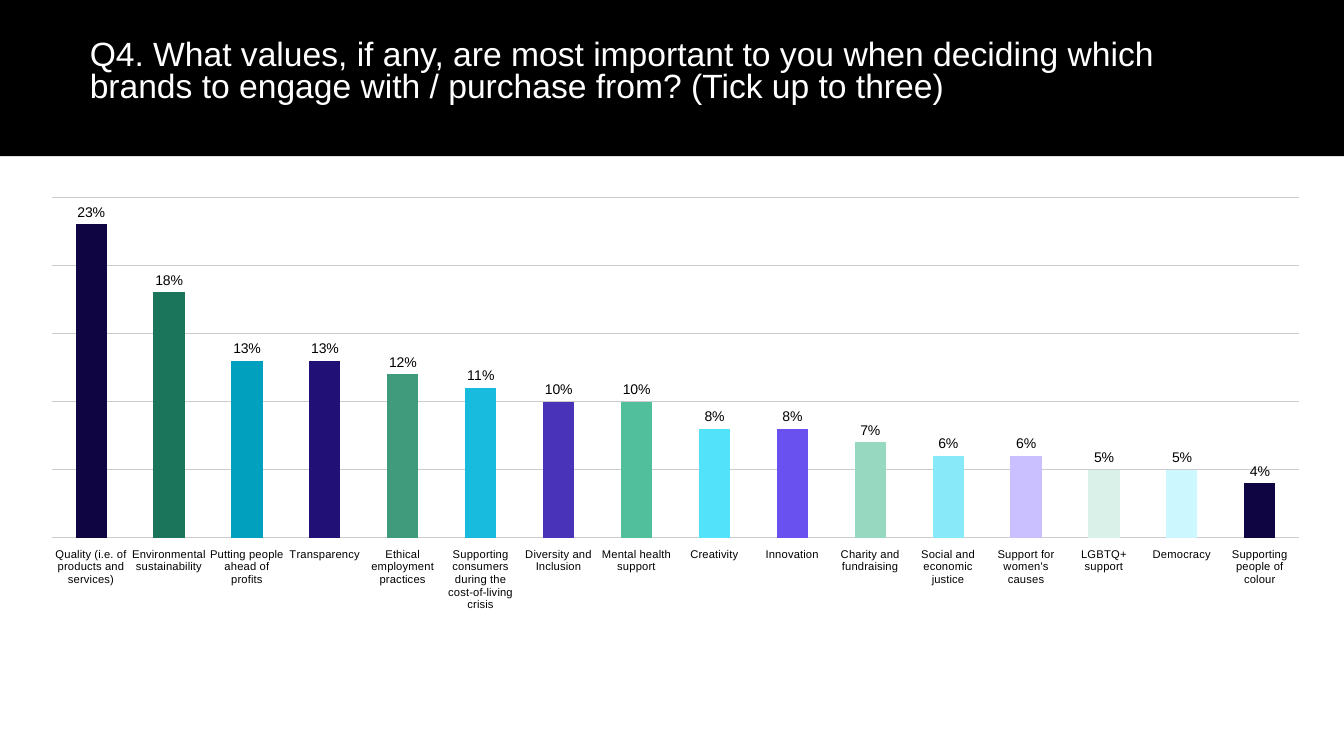
import pptx
import pptx.chart.data
import pptx.dml.color
import pptx.enum.chart
import pptx.enum.shapes
import pptx.enum.text
import pptx.oxml
import pptx.oxml.ns
import pptx.util

PX = 9144  # EMU in one px, at 100 px to the inch
PAGE_WIDTH, PAGE_HEIGHT = 1333, 750
FONT = "Arial"
COLOURS = {
    "band": "000000", "title": "FFFFFF", "text": "000000", "grid": "CCCCCC",
    "navy": "0F0542", "forest": "1B755A", "teal": "00A0BE", "indigo": "211176",
    "green": "409A7C", "cyan": "18BBDD", "violet": "4933B9", "jade": "51BE9C",
    "aqua": "52E2FA", "purple": "6951EF", "mint": "96D8C0", "sky": "88E9F9",
    "lilac": "CBC0FF", "pale mint": "D9F1E8", "pale aqua": "CCF7FF",
}
QUESTION = ("Q4. What values, if any, are most important to you when deciding which "
            "brands to engage with / purchase from? (Tick up to three)")
ANSWERS = [
    ("Quality (i.e. of products and services)", 0.23, "navy"),
    ("Environmental sustainability", 0.18, "forest"),
    ("Putting people ahead of profits", 0.13, "teal"),
    ("Transparency", 0.13, "indigo"),
    ("Ethical employment practices", 0.12, "green"),
    ("Supporting consumers during the cost-of-living crisis", 0.11, "cyan"),
    ("Diversity and Inclusion", 0.10, "violet"),
    ("Mental health support", 0.10, "jade"),
    ("Creativity", 0.08, "aqua"),
    ("Innovation", 0.08, "purple"),
    ("Charity and fundraising", 0.07, "mint"),
    ("Social and economic justice", 0.06, "sky"),
    ("Support for women's causes", 0.06, "lilac"),
    ("LGBTQ+ support", 0.05, "pale mint"),
    ("Democracy", 0.05, "pale aqua"),
    ("Supporting people of colour", 0.04, "navy"),
]


def emu(*lengths):
    return [pptx.util.Emu(length * PX) for length in lengths]


def colour(name):
    return pptx.dml.color.RGBColor.from_string(COLOURS[name])


def style_font(font, size, name="text"):
    font.name = FONT
    font.size = pptx.util.Pt(size)
    font.bold = False
    font.color.rgb = colour(name)


def add_header(page, left, top, width, height):
    # Black band behind the title
    band = page.shapes.add_shape(
        pptx.enum.shapes.MSO_SHAPE.RECTANGLE, *emu(left, top, width, height))
    band.shadow.inherit = False
    band.fill.solid()
    band.fill.fore_color.rgb = colour("band")
    band.line.fill.background()

    # Question
    title = page.shapes.title
    title.element.addprevious(band.element)
    title.left, title.top, title.width, title.height = emu(
        left + 79, top + 35, width - 185, 80)
    frame = title.text_frame
    frame.word_wrap = True
    frame.auto_size = pptx.enum.text.MSO_AUTO_SIZE.NONE
    frame.vertical_anchor = pptx.enum.text.MSO_ANCHOR.TOP
    para = frame.paragraphs[0]
    para.alignment = pptx.enum.text.PP_ALIGN.LEFT
    para.line_spacing = 0.8
    para.space_before = pptx.util.Pt(0)
    span = para.add_run()
    span.text = QUESTION
    style_font(span.font, 24, "title")


def set_plot_area(chart, x, y, w, h):
    """Fix the inner plot area, in fractions of the chart."""
    plot_area = chart.element.chart.plotArea
    for old in plot_area.findall(pptx.oxml.ns.qn("c:layout")):
        plot_area.remove(old)
    sizes = "".join(f'<c:{tag} val="{value}"/>'
                    for tag, value in zip("xywh", (x, y, w, h)))
    plot_area.insert(0, pptx.oxml.parse_xml(
        f'<c:layout {pptx.oxml.ns.nsdecls("c")}><c:manualLayout>'
        '<c:layoutTarget val="inner"/><c:xMode val="edge"/><c:yMode val="edge"/>'
        f'{sizes}</c:manualLayout></c:layout>'))


def add_answer_chart(page, left, top, width, height):
    data = pptx.chart.data.CategoryChartData(number_format="0%")
    data.categories = [answer for answer, share, tint in ANSWERS]
    data.add_series("Series 1", [share for answer, share, tint in ANSWERS])
    chart = page.shapes.add_chart(
        pptx.enum.chart.XL_CHART_TYPE.COLUMN_CLUSTERED,
        *emu(left, top, width, height), data).chart
    chart.has_title = False
    chart.has_legend = False
    style_font(chart.font, 12)
    set_plot_area(chart, 0.02, 0.02, 0.96, 0.79)

    # Axes and gridlines
    answers = chart.category_axis
    answers.major_tick_mark = pptx.enum.chart.XL_TICK_MARK.NONE
    answers.tick_label_position = pptx.enum.chart.XL_TICK_LABEL_POSITION.LOW
    answers.format.line.fill.background()
    style_font(answers.tick_labels.font, 8)
    shares = chart.value_axis
    shares.visible = False
    shares.minimum_scale, shares.maximum_scale = 0, 0.25
    shares.major_unit = 0.05
    shares.has_major_gridlines = True
    grid = shares.major_gridlines.format.line
    grid.color.rgb = colour("grid")
    grid.width = pptx.util.Pt(0.75)

    # Columns and their labels
    plot = chart.plots[0]
    plot.gap_width = 150
    plot.vary_by_categories = False
    series = plot.series[0]
    for index, (answer, share, tint) in enumerate(ANSWERS):
        fill = series.points[index].format.fill
        fill.solid()
        fill.fore_color.rgb = colour(tint)
    labels = series.data_labels
    labels.show_value = True
    labels.number_format = "0%"
    labels.number_format_is_linked = False
    labels.position = pptx.enum.chart.XL_LABEL_POSITION.OUTSIDE_END
    style_font(labels.font, 10)


def main():
    deck = pptx.Presentation()
    deck.slide_width, deck.slide_height = emu(PAGE_WIDTH, PAGE_HEIGHT)
    page = deck.slides.add_slide(deck.slide_layouts.get_by_name("Title Only"))
    add_header(page, 0, 0, PAGE_WIDTH, 155)
    add_answer_chart(page, 26, 187, 1288, 428)
    deck.save("out.pptx")


if __name__ == "__main__":
    main()
